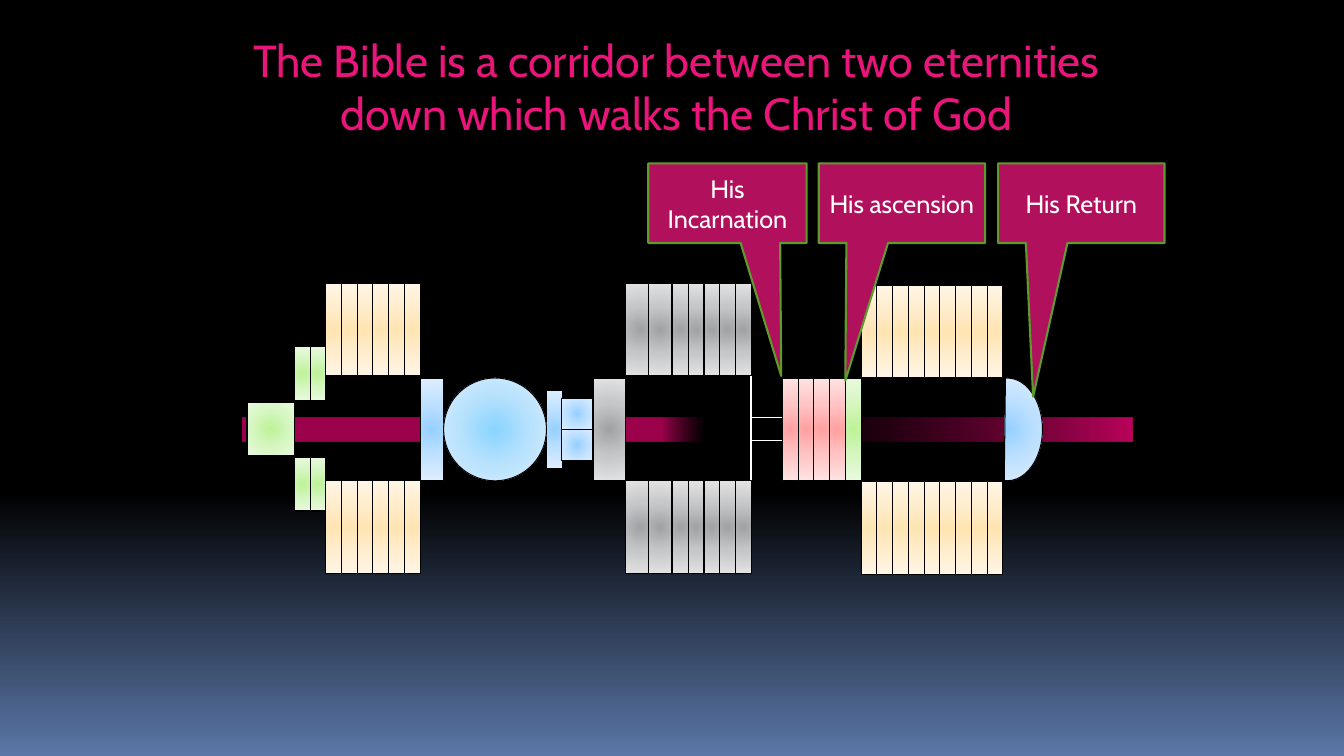
import pptx
import pptx.util
import pptx.dml.color
import pptx.enum.shapes
import pptx.enum.text
import pptx.oxml.ns
import lxml.etree

Inches = pptx.util.Inches
Pt = pptx.util.Pt
RGBColor = pptx.dml.color.RGBColor
MSO = pptx.enum.shapes.MSO_SHAPE
qn = pptx.oxml.ns.qn

BLACK = RGBColor(0x00, 0x00, 0x00)
WHITE = RGBColor(0xFF, 0xFF, 0xFF)
DUSK = RGBColor(0x5B, 0x77, 0xA8)
PINK = RGBColor(0xEA, 0x15, 0x7A)
CALLOUT = RGBColor(0xB0, 0x10, 0x5C)
CALLOUT_LINE = RGBColor(0x5E, 0x9B, 0x2C)
BAR_LEFT = RGBColor(0x9E, 0x03, 0x4D)
BAR_GAP = RGBColor(0x6F, 0x02, 0x36)
BAR_RIGHT = RGBColor(0xBB, 0x04, 0x5B)
GREEN = [RGBColor(0xBE, 0xF2, 0x97), RGBColor(0xD5, 0xF6, 0xC0), RGBColor(0xEA, 0xFA, 0xE0)]
CREAM = [RGBColor(0xFF, 0xE4, 0xB1), RGBColor(0xFF, 0xED, 0xCE), RGBColor(0xFF, 0xF6, 0xE7)]
BLUE = [RGBColor(0x96, 0xD0, 0xFF), RGBColor(0xBF, 0xE1, 0xFF), RGBColor(0xE0, 0xEF, 0xFF)]
SKY = [RGBColor(0x8A, 0xD4, 0xFF), RGBColor(0xB9, 0xE2, 0xFD), RGBColor(0xDD, 0xF0, 0xFD)]
GREY = [RGBColor(0xA1, 0xA2, 0xA4), RGBColor(0xC6, 0xC7, 0xC8), RGBColor(0xE3, 0xE3, 0xE4)]
RED = [RGBColor(0xFF, 0xA0, 0xA0), RGBColor(0xFF, 0xC5, 0xC5), RGBColor(0xFF, 0xE3, 0xE3)]
FONT = "Cabin"
STEP = 1.25 / 8


def set_gradient(fill, owner, stops, angle=None):
    fill.gradient()
    grad = next(owner.iter(qn("a:gradFill")))
    for child in list(grad):
        grad.remove(child)
    gs_list = lxml.etree.SubElement(grad, qn("a:gsLst"))
    for pos, color, alpha in stops:
        gs = lxml.etree.SubElement(gs_list, qn("a:gs"), pos=str(pos * 1000))
        clr = lxml.etree.SubElement(gs, qn("a:srgbClr"), val=str(color))
        if alpha < 100:
            lxml.etree.SubElement(clr, qn("a:alpha"), val=str(alpha * 1000))
    if angle is None:
        radial = lxml.etree.SubElement(grad, qn("a:path"), path="circle")
        lxml.etree.SubElement(radial, qn("a:fillToRect"), l="50000", t="50000", r="50000", b="50000")
    else:
        lxml.etree.SubElement(grad, qn("a:lin"), ang=str(angle * 60000), scaled="0")


def add_block(kind, x, y, w, h, colors):
    sp = s.shapes.add_shape(kind, Inches(x), Inches(y), Inches(w), Inches(h))
    sp.shadow.inherit = False
    set_gradient(sp.fill, sp.element.spPr, [(pos, c, 100) for pos, c in zip((0, 50, 100), colors)])
    sp.line.color.rgb = BLACK
    sp.line.width = Pt(0.75)
    return sp


prs = pptx.Presentation()
prs.slide_width = Inches(13.33)
prs.slide_height = Inches(7.5)
s = prs.slides.add_slide(prs.slide_layouts[5])
set_gradient(s.background.fill, s.element, [(0, BLACK, 100), (65, BLACK, 100), (100, DUSK, 100)], 90)

title = s.shapes.title
title.left, title.top, title.width, title.height = Inches(2.34), Inches(0.23), Inches(8.74), Inches(1.25)
tf = title.text_frame
tf.text = "The Bible is a corridor between two eternities down which walks the Christ of God"
tf.word_wrap = True
tf.auto_size = pptx.enum.text.MSO_AUTO_SIZE.NONE
tf.vertical_anchor = pptx.enum.text.MSO_ANCHOR.MIDDLE
p = tf.paragraphs[0]
p.alignment = pptx.enum.text.PP_ALIGN.CENTER
p.font.name = FONT
p.font.size = Pt(32)
p.font.color.rgb = PINK

bar = s.shapes.add_shape(MSO.RECTANGLE, Inches(2.41), Inches(4.14), Inches(8.82), Inches(0.24))
bar.shadow.inherit = False
bar.line.fill.background()
set_gradient(bar.fill, bar.element.spPr,
             [(47, BAR_LEFT, 100), (52, BAR_GAP, 0), (62, BAR_GAP, 0), (100, BAR_RIGHT, 100)], 0)

divider = s.shapes.add_connector(pptx.enum.shapes.MSO_CONNECTOR.STRAIGHT,
                                 Inches(7.45), Inches(3.73), Inches(7.45), Inches(4.77))
divider.line.color.rgb = WHITE
divider.line.width = Pt(0.94)
lxml.etree.SubElement(divider.element.spPr, qn("a:effectLst"))

passage = s.shapes.add_shape(MSO.RECTANGLE, Inches(7.45), Inches(4.14), Inches(0.78), Inches(0.23))
passage.shadow.inherit = False
passage.fill.solid()
passage.fill.fore_color.rgb = BLACK
passage.line.color.rgb = WHITE
passage.line.width = Pt(0.75)

for x, y, w, h, colors in [
    (2.45, 3.99, 0.47, 0.53, GREEN),
    (4.17, 3.75, 0.23, 1.02, BLUE),
    (5.42, 3.87, 0.16, 0.78, BLUE),
    (5.57, 3.95, 0.31, 0.31, BLUE),
    (5.57, 4.26, 0.31, 0.31, BLUE),
    (5.89, 3.75, 0.31, 1.02, GREY),
    (6.2, 2.81, 0.31, 0.92, GREY),
    (6.2, 4.77, 0.31, 0.92, GREY),
    (6.43, 2.81, 0.23, 0.92, GREY),
    (6.43, 4.77, 0.23, 0.92, GREY),
]:
    add_block(MSO.RECTANGLE, x, y, w, h, colors)

for x, tops, h, count, colors in [
    (2.92, (3.44, 4.54), 0.53, 2, GREEN),
    (3.23, (2.81, 4.77), 0.92, 6, CREAM),
    (6.67, (2.81, 4.77), 0.92, 5, GREY),
    (7.76, (3.75,), 1.02, 4, RED),
    (8.39, (3.75,), 1.02, 1, GREEN),
    (8.54, (2.83, 4.78), 0.92, 9, CREAM),
]:
    for y in tops:
        for i in range(count):
            add_block(MSO.RECTANGLE, x + i * STEP, y, STEP, h, colors)

add_block(MSO.OVAL, 4.4, 3.75, 1.02, 1.02, SKY)
dome = add_block(MSO.CHORD, 9.64, 3.75, 0.7, 1.02, BLUE)
dome.adjustments[0] = 52.82
dome.adjustments[1] = 163.99
dome.element.spPr.xfrm.set("flipH", "1")
dome.element.spPr.xfrm.set("flipV", "1")

for text, x, w, tip_x, tip_y in [
    ("His Incarnation", 6.43, 1.57, 0.34, 2.17),
    ("His ascension", 8.12, 1.65, -0.34, 2.23),
    ("His Return", 9.9, 1.65, -0.29, 2.43),
]:
    sp = s.shapes.add_shape(MSO.RECTANGULAR_CALLOUT, Inches(x), Inches(1.62), Inches(w), Inches(0.79))
    sp.shadow.inherit = False
    sp.adjustments[0] = tip_x
    sp.adjustments[1] = tip_y
    sp.fill.solid()
    sp.fill.fore_color.rgb = CALLOUT
    sp.line.color.rgb = CALLOUT_LINE
    sp.line.width = Pt(1.5)
    tf = sp.text_frame
    tf.text = text
    tf.word_wrap = True
    tf.vertical_anchor = pptx.enum.text.MSO_ANCHOR.MIDDLE
    p = tf.paragraphs[0]
    p.alignment = pptx.enum.text.PP_ALIGN.CENTER
    p.font.name = FONT
    p.font.size = Pt(18)
    p.font.color.rgb = WHITE

prs.save("out.pptx")
